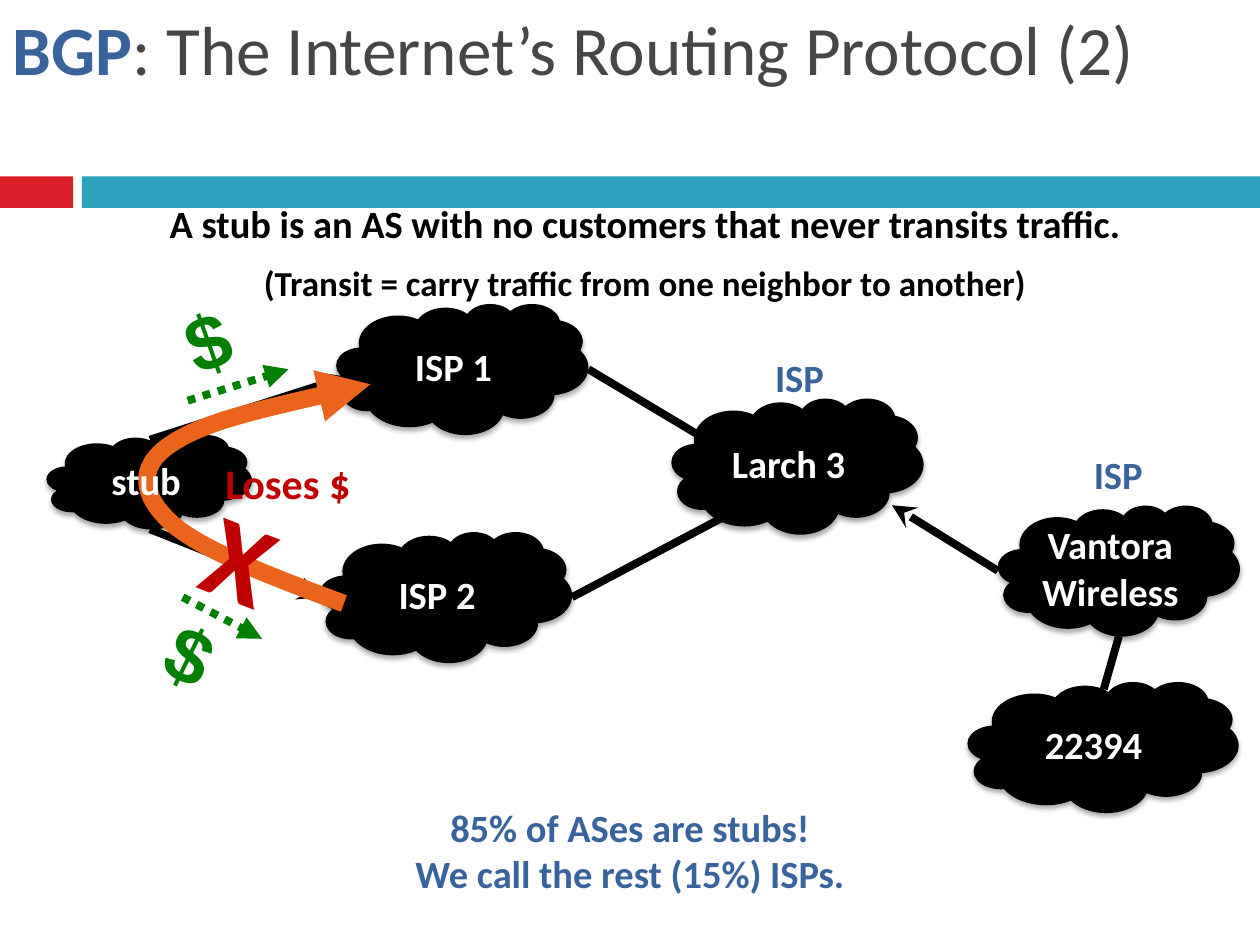
from dataclasses import dataclass
from typing import NamedTuple

from lxml import etree
from pptx import Presentation
from pptx.dml.color import RGBColor
from pptx.enum.dml import MSO_LINE
from pptx.enum.shapes import MSO_CONNECTOR, MSO_SHAPE
from pptx.enum.text import MSO_ANCHOR, PP_ALIGN
from pptx.oxml import parse_xml
from pptx.oxml.ns import nsdecls, qn
from pptx.util import Inches, Pt

CENTER, LEFT = PP_ALIGN.CENTER, PP_ALIGN.LEFT
MIDDLE, TOP = MSO_ANCHOR.MIDDLE, MSO_ANCHOR.TOP
DOTTED = MSO_LINE.ROUND_DOT


@dataclass(frozen=True)
class Theme:
    font: str = "Calibri"
    money_font: str = "Arial"
    black: str = "000000"
    white: str = "FFFFFF"
    gray: str = "464646"
    blue: str = "39639D"
    teal: str = "2DA2BF"
    red: str = "DA1F28"
    dark_red: str = "C00000"
    green: str = "008000"
    orange: str = "EB641B"
    title: float = 39.6
    body: float = 22
    note: float = 20
    loss: float = 24
    money: float = 44
    cross: float = 66
    link: float = 4.5
    route: float = 10


THEME = Theme()


class Box(NamedTuple):
    left: float
    top: float
    width: float
    height: float

    def emu(self) -> list:
        return [Inches(v) for v in self]


class Cloud(NamedTuple):
    box: Box
    lines: tuple = ()


class Link(NamedTuple):
    start: tuple
    end: tuple
    head: str = ""
    color: str = THEME.black
    dash: object = None


class Label(NamedTuple):
    box: Box
    lines: tuple
    color: str
    size: float = THEME.body
    align: object = CENTER
    font: str = THEME.font
    rotation: float = 0
    wrap: bool = True


def write(tf, lines: tuple, color: str, size: float, align, font: str) -> None:
    for i, line in enumerate(lines):
        p = tf.paragraphs[0] if i == 0 else tf.add_paragraph()
        p.text = line
        p.alignment = align
        p.font.name, p.font.size, p.font.bold = font, Pt(size), True
        p.font.color.rgb = RGBColor.from_string(color)


def add_plain(slide, kind, box: Box, fill: str = ""):
    sp = slide.shapes.add_shape(kind, *box.emu())
    sp.shadow.inherit = False
    sp.line.fill.background()
    if fill:
        sp.fill.solid()
        sp.fill.fore_color.rgb = RGBColor.from_string(fill)
    else:
        sp.fill.background()
    return sp


def add_cloud(slide, cloud: Cloud) -> None:
    sp = add_plain(slide, MSO_SHAPE.CLOUD, cloud.box, THEME.black)
    sp._element.spPr.find(qn("a:effectLst")).append(parse_xml(
        f'<a:outerShdw {nsdecls("a")} blurRad="{Pt(3)}" dist="{Pt(2)}" dir="5400000" '
        'rotWithShape="0"><a:srgbClr val="000000"><a:alpha val="35000"/></a:srgbClr>'
        '</a:outerShdw>'))
    tf = sp.text_frame
    tf.word_wrap, tf.vertical_anchor = False, MIDDLE
    write(tf, cloud.lines, THEME.white, THEME.body, CENTER, THEME.font)


def style_line(sp, color: str, width: float, head: str = "", dash=None) -> None:
    sp.line.color.rgb = RGBColor.from_string(color)
    sp.line.width = Pt(width)
    if dash:
        sp.line.dash_style = dash
    if head:
        etree.SubElement(sp.get_or_add_ln(), qn("a:tailEnd"), type=head)


def add_link(slide, link: Link) -> None:
    ends = [Inches(v) for v in link.start + link.end]
    cxn = slide.shapes.add_connector(MSO_CONNECTOR.STRAIGHT, *ends)
    style_line(cxn, link.color, THEME.link, link.head, link.dash)
    etree.SubElement(cxn._element.spPr, qn("a:effectLst"))


def add_label(slide, label: Label):
    sp = slide.shapes.add_textbox(*label.box.emu())
    sp.rotation = label.rotation
    tf = sp.text_frame
    tf.word_wrap, tf.vertical_anchor = label.wrap, TOP
    write(tf, label.lines, label.color, label.size, label.align, label.font)
    return sp


def add_isp_tag(slide, box: Box, align) -> None:
    tf = add_plain(slide, MSO_SHAPE.ROUNDED_RECTANGLE, box).text_frame
    tf.word_wrap, tf.vertical_anchor = True, MIDDLE
    write(tf, ("ISP",), THEME.blue, THEME.body, align, THEME.font)


def add_title(slide) -> None:
    tf = slide.shapes.add_textbox(*Box(0, 0, 10, 0.75).emu()).text_frame
    tf.word_wrap, tf.vertical_anchor = True, MIDDLE
    p = tf.paragraphs[0]
    p.font.name, p.font.size = THEME.font, Pt(THEME.title)
    for text, color, bold in (("BGP", THEME.blue, True),
                              (": The Internet’s Routing Protocol (2)", THEME.gray, False)):
        r = p.add_run()
        r.text = text
        r.font.bold = bold
        r.font.color.rgb = RGBColor.from_string(color)


def add_route(slide, points: list) -> None:
    """Draw a smooth arrow; after the first point, every three make one Bézier."""
    start, *rest = [(Inches(x), Inches(y)) for x, y in points]
    builder = slide.shapes.build_freeform(*start)
    builder.add_line_segments(rest, close=False)
    sp = builder.convert_to_shape()
    sp.shadow.inherit = False
    sp.fill.background()
    style_line(sp, THEME.orange, THEME.route, "triangle")
    path = next(sp._element.iter(qn("a:path")))
    segments = path.findall(qn("a:lnTo"))
    for i in range(0, len(segments), 3):
        curve = etree.SubElement(path, qn("a:cubicBezTo"))
        for segment in segments[i:i + 3]:
            curve.append(segment[0])
            path.remove(segment)


CLOUDS = [
    Cloud(Box(2.67, 2.41, 2, 1.04), ("ISP 1",)),
    Cloud(Box(7.92, 4.01, 1.92, 1.04), ("Vantora", "Wireless")),
    Cloud(Box(0.37, 3.45, 1.63, 0.75)),
    Cloud(Box(2.54, 4.22, 2, 1.04), ("ISP 2",)),
    Cloud(Box(5.33, 3.16, 2, 1.08), ("Larch 3",)),
    Cloud(Box(7.68, 5.41, 2.15, 1.04), ("22394",)),
]
LINKS = [
    Link((1.19, 3.49), (2.75, 2.99), "stealth"),
    Link((4.54, 4.74), (5.75, 4.1)),
    Link((4.67, 2.93), (5.54, 3.45)),
    Link((1.19, 4.2), (2.55, 4.74), "stealth"),
    Link((7.92, 4.53), (7.08, 4.01), "stealth"),
    Link((8.88, 5.05), (8.76, 5.47)),
    Link((1.45, 4.74), (2.08, 5.07), "triangle", THEME.green, DOTTED),
    Link((1.49, 3.18), (2.29, 2.93), "triangle", THEME.green, DOTTED),
]
PAYMENTS = [
    Label(Box(left, top, 0.42, 0.84), ("$",), THEME.green, THEME.money, LEFT,
          THEME.money_font, rotation)
    for left, top, rotation in ((1.25, 4.74, 26), (1.38, 2.3, 340.4))
]
DEFINITION = Label(Box(0.12, 1.54, 10, 0.93),
                   ("A stub is an AS with no customers that never transits traffic.",
                    "(Transit = carry traffic from one neighbor to another)"), THEME.black)
SUMMARY = Label(Box(0, 6.33, 10, 0.84),
                ("85% of ASes are stubs!", "We call the rest (15%) ISPs."), THEME.blue)
ROUTE = [(2.73, 4.79), (2.16, 4.58), (1.59, 4.36), (1.36, 4.15), (1.13, 3.94),
         (1.08, 3.71), (1.35, 3.53), (1.61, 3.35), (2.27, 3.2), (2.94, 3.05)]
FRONT_LABELS = [
    Label(Box(1.55, 3.88, 1.08, 1.21), ("X",), THEME.dark_red, THEME.cross, LEFT, rotation=21.2),
    Label(Box(1.69, 3.58, 1.21, 0.5), ("Loses $",), THEME.dark_red, THEME.loss, LEFT, wrap=False),
    Label(Box(0.78, 3.58, 0.76, 0.47), ("stub",), THEME.white, wrap=False),
]


def main() -> None:
    prs = Presentation()
    prs.slide_width, prs.slide_height = Inches(10), Inches(7.5)
    slide = prs.slides.add_slide(prs.slide_layouts[6])

    # Header band and title
    add_plain(slide, MSO_SHAPE.RECTANGLE, Box(0, 1.4, 0.58, 0.25), THEME.red)
    add_plain(slide, MSO_SHAPE.RECTANGLE, Box(0.65, 1.4, 9.35, 0.25), THEME.teal)
    add_title(slide)

    # Network
    for cloud in CLOUDS:
        add_cloud(slide, cloud)
    for link in LINKS:
        add_link(slide, link)
    for payment in PAYMENTS:
        add_label(slide, payment)
    add_isp_tag(slide, Box(6.02, 2.65, 1.07, 0.68), LEFT)
    add_isp_tag(slide, Box(8.34, 3.42, 1.07, 0.68), CENTER)

    # Definition and summary
    note = add_label(slide, DEFINITION).text_frame.paragraphs[1]
    note.font.size, note.space_before = Pt(THEME.note), Pt(8.5)
    add_label(slide, SUMMARY)

    # Rejected transit route
    add_route(slide, ROUTE)
    for label in FRONT_LABELS:
        add_label(slide, label)

    prs.save("out.pptx")


if __name__ == "__main__":
    main()
